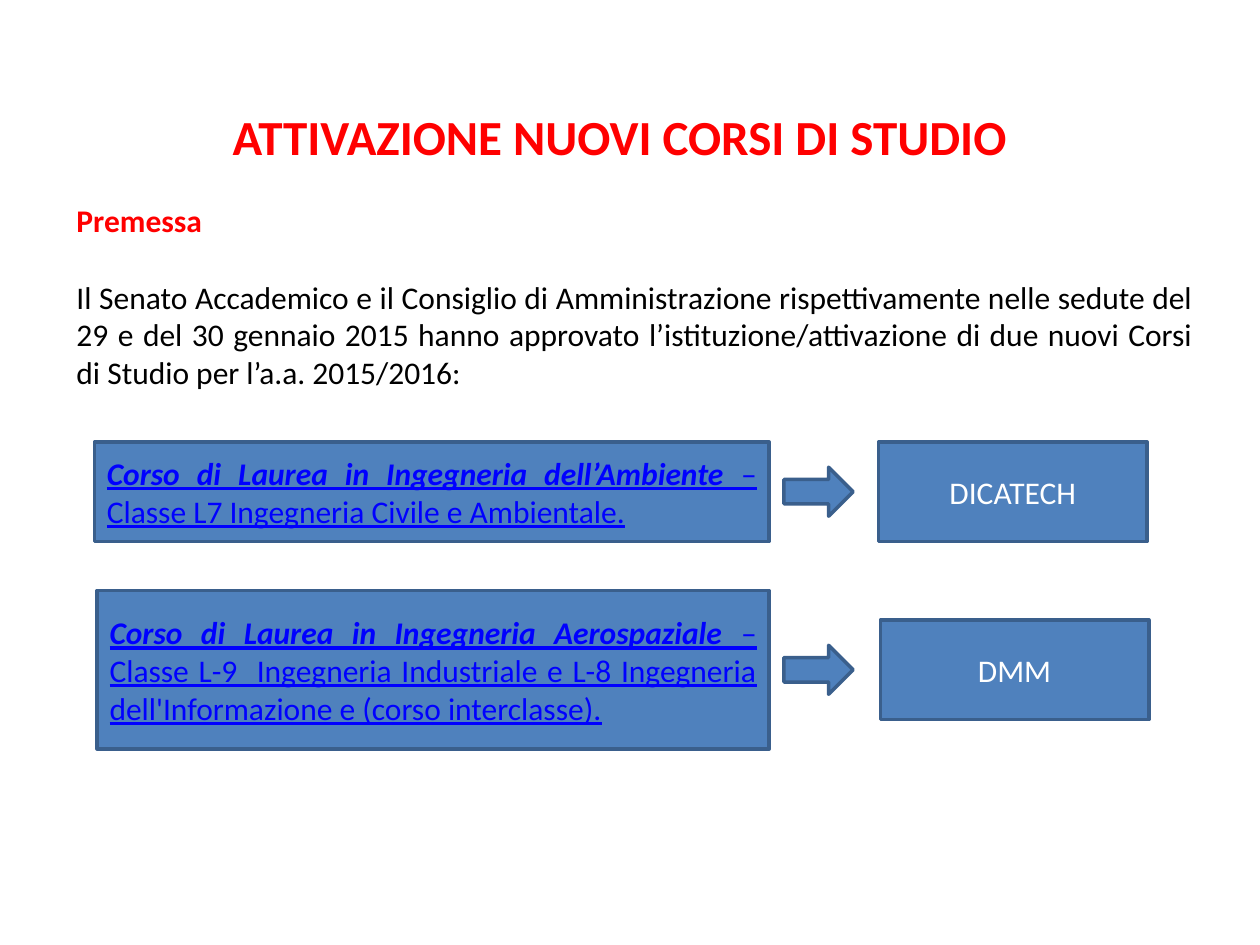
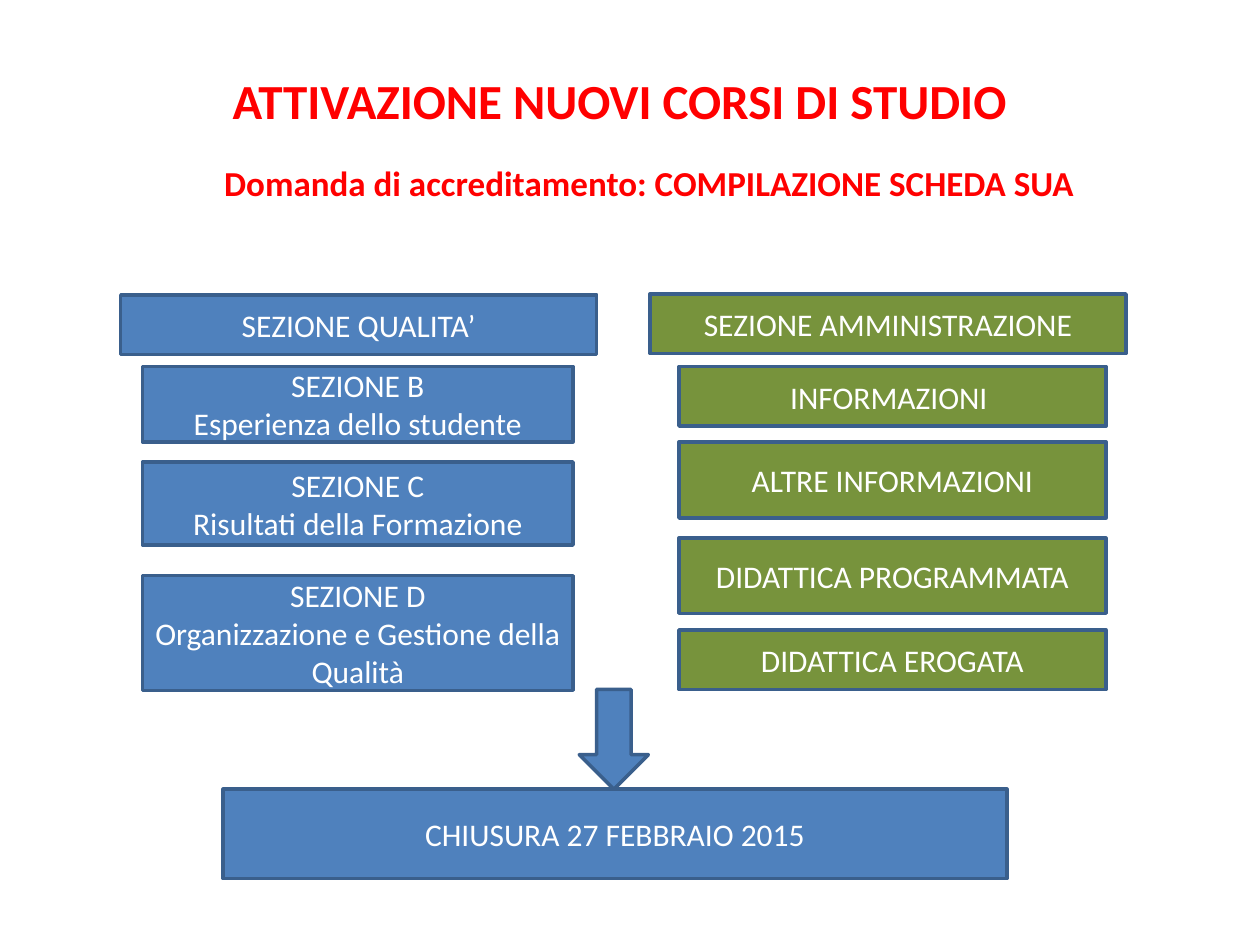
import pptx
import pptx.util
import pptx.dml.color
import pptx.enum.shapes
import pptx.enum.text
from dataclasses import dataclass

Pt = pptx.util.Pt
SHAPE = pptx.enum.shapes.MSO_SHAPE
ALIGN = pptx.enum.text.PP_ALIGN
ANCHOR = pptx.enum.text.MSO_ANCHOR


@dataclass(frozen=True)
class Theme:
    font: str = "Calibri"
    red: str = "FF0000"
    black: str = "000000"
    white: str = "FFFFFF"
    link: str = "0000FF"
    blue: str = "4F81BD"
    green: str = "77933C"
    outline: str = "3A5F8C"
    title_size: int = 28
    subtitle_size: int = 20
    text_size: int = 18
    line_width: int = 2


THEME = Theme()
TITLE = "ATTIVAZIONE NUOVI CORSI DI STUDIO"


def rgb(value):
    return pptx.dml.color.RGBColor.from_string(value)


def format_run(r, color, size=THEME.text_size, bold=False):
    r.font.name = THEME.font
    r.font.size = Pt(size)
    r.font.color.rgb = rgb(color)
    r.font.bold = bold


def format_paragraph(p, color, align, size=THEME.text_size, bold=False, before=0):
    p.alignment = align
    p.space_before = Pt(before)
    for r in p.runs:
        format_run(r, color, size, bold)


def place(sp, left, top, width, height):
    sp.left, sp.top, sp.width, sp.height = map(Pt, (left, top, width, height))


def add_titled_slide(prs, title_top, title_height, body_box, body_text):
    """Add a slide with the shared title; return it and its body paragraphs."""
    s = prs.slides.add_slide(prs.slide_layouts[0])
    place(s.shapes.title, 48, title_top, 612, title_height)
    body = s.placeholders[1]
    place(body, *body_box)
    for sp, text, anchor in ((s.shapes.title, TITLE, ANCHOR.MIDDLE),
                             (body, body_text, ANCHOR.TOP)):
        tf = sp.text_frame
        tf.text = text
        tf.word_wrap = True
        tf.auto_size = pptx.enum.text.MSO_AUTO_SIZE.NONE
        tf.vertical_anchor = anchor
    format_paragraph(s.shapes.title.text_frame.paragraphs[0], THEME.red,
                     ALIGN.CENTER, THEME.title_size, bold=True)
    return s, body.text_frame.paragraphs


def add_block(s, kind, left, top, width, height, fill=THEME.blue):
    sp = s.shapes.add_shape(kind, *map(Pt, (left, top, width, height)))
    sp.shadow.inherit = False
    sp.fill.solid()
    sp.fill.fore_color.rgb = rgb(fill)
    sp.line.color.rgb = rgb(THEME.outline)
    sp.line.width = Pt(THEME.line_width)
    return sp


def add_label_box(s, text, left, top, width, height, fill=THEME.blue):
    sp = add_block(s, SHAPE.RECTANGLE, left, top, width, height, fill)
    tf = sp.text_frame
    tf.text = text
    tf.word_wrap = True
    tf.vertical_anchor = ANCHOR.MIDDLE
    for p in tf.paragraphs:
        format_paragraph(p, THEME.white, ALIGN.CENTER)
    return sp


def add_course_box(s, name, degree_class, left, top, width, height):
    sp = add_label_box(s, name, left, top, width, height)
    p = sp.text_frame.paragraphs[0]
    p.add_run().text = degree_class
    format_paragraph(p, THEME.link, ALIGN.JUSTIFY)
    for r in p.runs:
        r.font.underline = True
    p.runs[0].font.bold = p.runs[0].font.italic = True


def add_course_row(s, name, degree_class, department, left, top, height, dept_left):
    """Course box, arrow and department box, all centred on one line."""
    middle = top + height / 2
    add_course_box(s, name, degree_class, left, top, 439.5 - left, height)
    add_block(s, SHAPE.RIGHT_ARROW, 448, middle - 14, 39.5, 28)
    add_label_box(s, department, dept_left, middle - 28.5, 153.5, 57)


def add_section_column(s, header, header_box, left, width, items, fill):
    add_label_box(s, header, *header_box, fill)
    for text, top, height in items:
        add_label_box(s, text, left, top, width, height, fill)


def build_courses(prs):
    premise = ("Premessa\n"
               "Il Senato Accademico e il Consiglio di Amministrazione rispettivamente "
               "nelle sedute del 29 e del 30 gennaio 2015 hanno approvato "
               "l’istituzione/attivazione di due nuovi Corsi di Studio per l’a.a. 2015/2016:")
    s, (heading, text) = add_titled_slide(prs, 21, 113, (36.5, 111.5, 652.5, 356.5), premise)
    format_paragraph(heading, THEME.red, ALIGN.LEFT, bold=True)
    format_paragraph(text, THEME.black, ALIGN.JUSTIFY, before=22)

    # Courses and the departments that run them
    add_course_row(s, "Corso di Laurea in Ingegneria dell’Ambiente ",
                   "– Classe L7 Ingegneria Civile e Ambientale.",
                   "DICATECH", 54, 252.5, 57, 502)
    add_course_row(s, "Corso di Laurea in Ingegneria Aerospaziale ",
                   "– Classe L-9  Ingegneria Industriale e L-8 Ingegneria "
                   "dell'Informazione e (corso interclasse).",
                   "DMM", 55.5, 337.5, 90.5, 503)


def build_accreditation(prs):
    s, (subtitle,) = add_titled_slide(prs, 26, 62.5, (82, 88.5, 578, 414),
                                      "Domanda di accreditamento: COMPILAZIONE SCHEDA SUA")
    format_paragraph(subtitle, THEME.red, ALIGN.CENTER, THEME.subtitle_size, bold=True)

    # Quality and administration columns
    add_section_column(s, "SEZIONE QUALITA’", (69, 168.5, 272, 34), 81.5, 246, [
        ("SEZIONE B\nEsperienza dello studente", 209.5, 43),
        ("SEZIONE C\nRisultati della Formazione", 264, 47.5),
        ("SEZIONE D\nOrganizzazione e Gestione della Qualità", 329, 65.5),
    ], THEME.blue)
    add_section_column(s, "SEZIONE AMMINISTRAZIONE", (371.5, 168, 272, 34), 388, 244, [
        ("INFORMAZIONI ", 209.5, 34),
        ("ALTRE INFORMAZIONI", 252.5, 43.5),
        ("DIDATTICA PROGRAMMATA", 307.5, 43),
        ("DIDATTICA EROGATA", 360, 34),
    ], THEME.green)

    # Closing date
    add_block(s, SHAPE.DOWN_ARROW, 331, 394, 39.5, 57)
    add_label_box(s, "CHIUSURA 27 FEBBRAIO 2015", 127.5, 451, 448, 51)


def main():
    prs = pptx.Presentation()
    prs.slide_width, prs.slide_height = Pt(720), Pt(540)
    build_courses(prs)
    build_accreditation(prs)
    prs.save("out.pptx")


if __name__ == "__main__":
    main()
